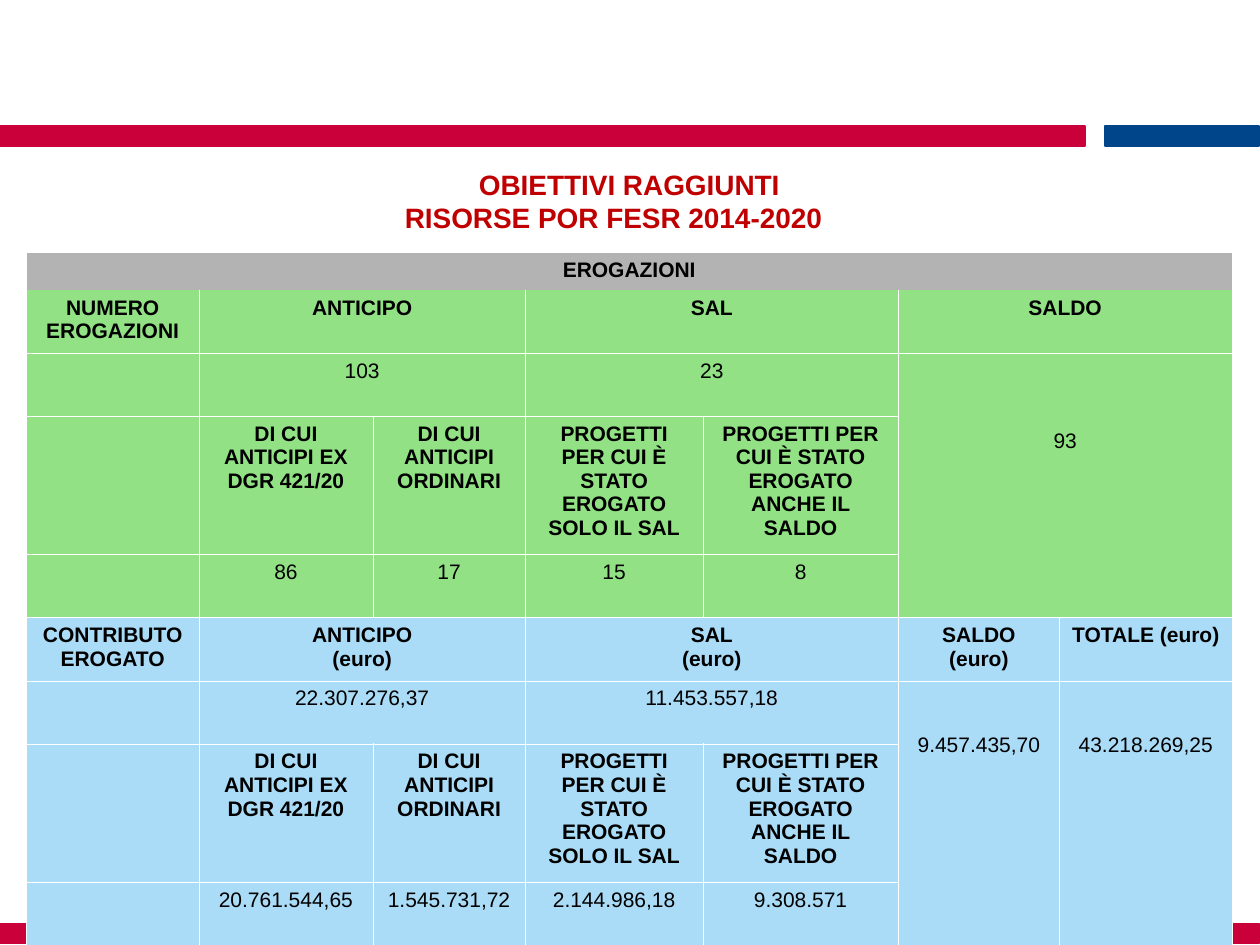
"""Build the slide on POR FESR payments: two bars, a title and a table."""
from lxml.etree import SubElement
from pptx import Presentation
from pptx.dml.color import RGBColor
from pptx.enum.shapes import MSO_SHAPE
from pptx.enum.text import PP_ALIGN
from pptx.oxml.ns import qn
from pptx.util import Inches, Pt


def tint(hue, part):
    part.solid()
    part.fore_color.rgb = RGBColor.from_string(hue)


def write(par, text, size, bold, hue):
    par.alignment = PP_ALIGN.CENTER
    run = par.add_run()
    run.text = text
    run.font.size = Pt(size)
    run.font.name = "Arial"
    run.font.bold = bold
    tint(hue, run.font.fill)


deck = Presentation()
deck.slide_width, deck.slide_height = Inches(10), Inches(7.5)
slide = deck.slides.add_slide(deck.slide_layouts[6])

RED, BLUE = "C90039", "004589"
for left, top, width, hue in ((0, 1, 8.61, RED), (0, 7.33, 9.99, RED), (8.77, 1, 1.22, BLUE)):
    bar = slide.shapes.add_shape(MSO_SHAPE.RECTANGLE, Inches(left), Inches(top), Inches(width), Inches(0.16))
    bar.shadow.inherit = False
    tint(hue, bar.fill)
    tint(hue, bar.line.fill)
    bar.line.width = Pt(1)

title = slide.shapes.add_textbox(Inches(0.35), Inches(1.28), Inches(9.29), Inches(0.64)).text_frame
title.word_wrap = True
write(title.paragraphs[0], "OBIETTIVI RAGGIUNTI", 16, True, "C00000")
second = title.add_paragraph()
second._p.get_or_add_pPr().set("marR", str(Inches(0.25)))
write(second, "RISORSE POR FESR 2014-2020", 16, True, "C00000")

cols = (1.37, 1.38, 1.21, 1.41, 1.55, 1.28, 1.37)
block = (0.5, 0.5, 1.1, 0.5)
rows = (0.3, *block, *block)
frame = slide.shapes.add_table(len(rows), len(cols), Inches(0.21), Inches(2), Inches(sum(cols)), Inches(sum(rows)))
table = frame.table
table._tbl.tblPr.find(qn("a:tableStyleId")).text = "{2D5ABB26-0587-4C30-8999-92F81FD0307C}"
for col, width in zip(table.columns, cols):
    col.width = Inches(width)
for row, height in zip(table.rows, rows):
    row.height = Inches(height)

kinds = ["DI CUI ANTICIPI EX DGR 421/20", "DI CUI ANTICIPI ORDINARI",
         "PROGETTI PER CUI È STATO EROGATO SOLO IL SAL",
         "PROGETTI PER CUI È STATO EROGATO ANCHE IL SALDO"]
data = [
    ["EROGAZIONI"],
    ["NUMERO EROGAZIONI", "ANTICIPO", "", "SAL", "", "SALDO"],
    ["", "103", "", "23", "", "93"],
    ["", *kinds],
    ["", "86", "17", "15", "8"],
    ["CONTRIBUTO EROGATO", "ANTICIPO\n(euro)", "", "SAL\n(euro)", "", "SALDO (euro)", "TOTALE (euro)"],
    ["", "22.307.276,37", "", "11.453.557,18", "", "9.457.435,70", "43.218.269,25"],
    ["", *kinds],
    ["", "20.761.544,65", "1.545.731,72", "2.144.986,18", "9.308.571"],
]

spans = [(0, 0, 0, 6), (1, 5, 1, 6), (2, 5, 4, 6), (6, 5, 8, 5), (6, 6, 8, 6)]
spans += [(r, c, r, c + 1) for r in (1, 2, 5, 6) for c in (1, 3)]
for top, left, end, right in spans:
    table.cell(top, left).merge(table.cell(end, right))

starts = (1, 5)
for r in range(len(rows)):
    hue = "B3B3B3" if r < 1 else "92E285" if r < 5 else "AADCF7"
    for c in range(len(cols)):
        cell = table.cell(r, c)
        deep = cell.span_height if cell.is_merge_origin else 1
        sides = ["lnL", "lnR"]
        if r not in starts:
            sides.append("lnT")
        if r + deep not in starts:
            sides.append("lnB")
        for side in sides:
            line = SubElement(cell._tc.get_or_add_tcPr(), qn("a:" + side), w=str(Pt(0.06)))
            SubElement(SubElement(line, qn("a:solidFill")), qn("a:srgbClr"), val="FFFFFF")
        tint(hue, cell.fill)

for r, texts in enumerate(data):
    for c, text in enumerate(texts):
        if not text:
            continue
        cell = table.cell(r, c)
        for i, part in enumerate(text.split("\n")):
            body = cell.text_frame
            par = body.add_paragraph() if i else body.paragraphs[0]
            write(par, part, 12, not text[0].isdigit(), "000000")

for r, c, drop in ((2, 5, 0.61), (6, 5, 0.42), (6, 6, 0.42)):
    table.cell(r, c).margin_top = Inches(drop)

deck.save("out.pptx")
